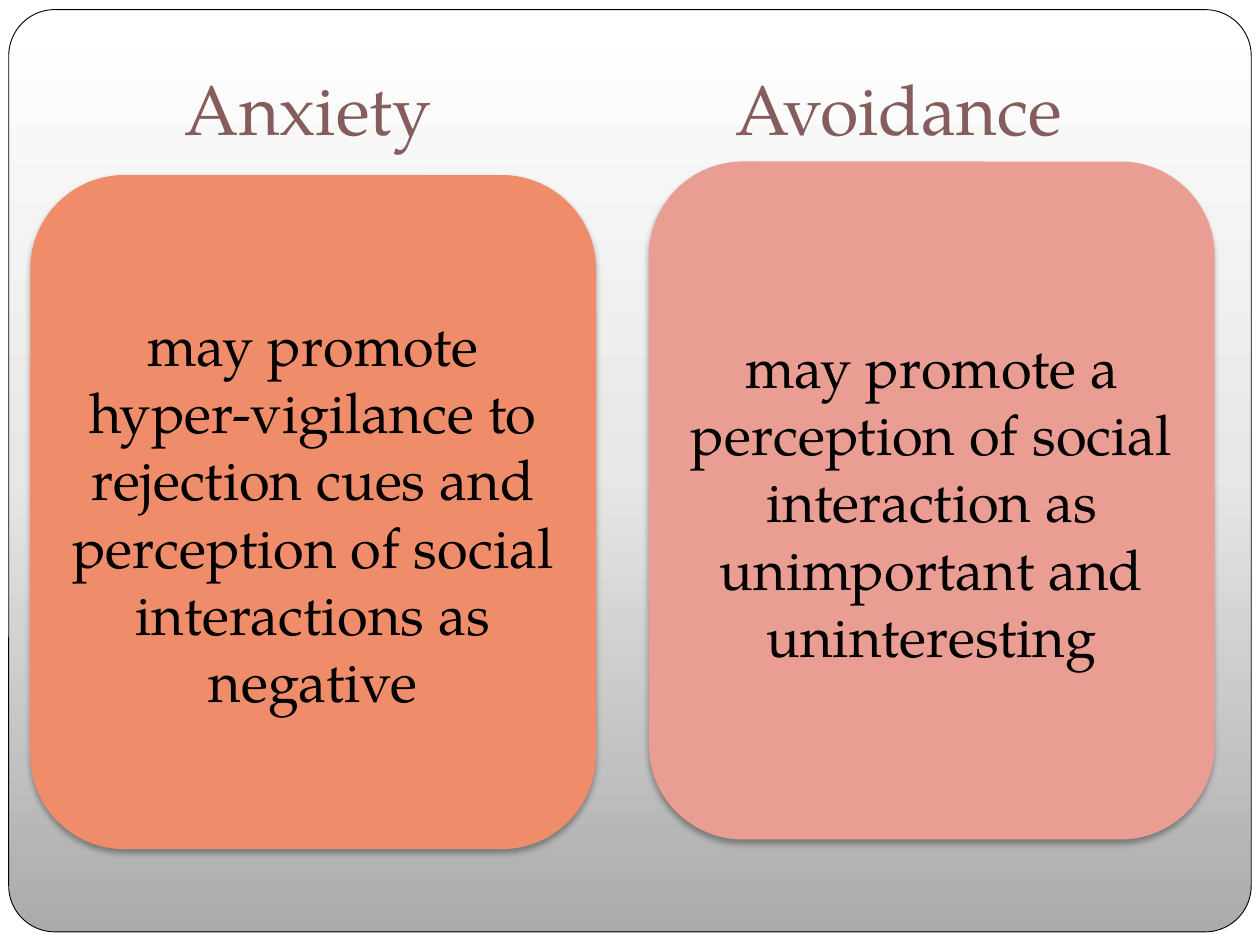
import copy

import pptx
import pptx.util
import pptx.dml.color
import pptx.enum.shapes
import pptx.enum.text
import pptx.oxml
import pptx.oxml.ns

Pt = pptx.util.Pt
FONT = "TeX Gyre Pagella"
STOPS = [(0, "ABABAB"), (0.5, "E7E7E7"), (1, "FFFFFF")]


def paint(code):
    return pptx.dml.color.RGBColor.from_string(code)


def place(shape, left, top, width, height):
    shape.left, shape.top = Pt(left), Pt(top)
    shape.width, shape.height = Pt(width), Pt(height)


def write(shape, text, size=32, color="000000"):
    frame = shape.text_frame
    frame.word_wrap = True
    frame.auto_size = pptx.enum.text.MSO_AUTO_SIZE.NONE
    frame.vertical_anchor = pptx.enum.text.MSO_ANCHOR.MIDDLE
    para = frame.paragraphs[0]
    para.alignment = pptx.enum.text.PP_ALIGN.CENTER
    para.space_before = Pt(0)
    run = para.add_run()
    run.text = text
    font = run.font
    font.name, font.size, font.bold = FONT, Pt(size), False
    font.color.rgb = paint(color)


def block(slide, box):
    kind = pptx.enum.shapes.MSO_SHAPE.ROUNDED_RECTANGLE
    shape = slide.shapes.add_shape(kind, *map(Pt, box))
    shape.shadow.inherit = False
    return shape


def panel(slide, box):
    shape = block(slide, box)
    shape.adjustments[0] = 0.05
    fill = shape.fill
    fill.gradient()
    fill.gradient_angle = 90
    first = shape._element.spPr.find(".//" + pptx.oxml.ns.qn("a:gs"))
    first.addnext(copy.deepcopy(first))
    for stop, (pos, code) in zip(fill.gradient_stops, STOPS):
        stop.position = pos
        stop.color.rgb = paint(code)
    shape.line.color.rgb = paint("000000")
    shape.line.width = Pt(0.5)


def shade(shape):
    effect = shape._element.spPr.find(pptx.oxml.ns.qn("a:effectLst"))
    effect.append(pptx.oxml.parse_xml(
        f'<a:outerShdw {pptx.oxml.ns.nsdecls("a")} blurRad="{Pt(3.5)}" '
        f'dist="{Pt(2.2)}" dir="5400000" rotWithShape="0">'
        '<a:srgbClr val="000000"><a:alpha val="32000"/></a:srgbClr>'
        '</a:outerShdw>'))


def card(slide, box, color, text):
    shape = block(slide, box)
    shape.fill.solid()
    shape.fill.fore_color.rgb = paint(color)
    shape.line.fill.background()
    shade(shape)
    write(shape, text)


def head(shape, box, text):
    place(shape, *box)
    write(shape, text, size=40, color="855D5D")


def main():
    deck = pptx.Presentation()
    deck.slide_width, deck.slide_height = Pt(720), Pt(540)
    slide = deck.slides.add_slide(deck.slide_layouts[4])
    slide.background.fill.solid()
    slide.background.fill.fore_color.rgb = paint("FFFFFF")

    title, body, *spare = slide.placeholders
    for item in spare:
        item._element.getparent().remove(item._element)

    panel(slide, (5, 5.5, 710, 527))
    card(slide, (370.8, 92.3, 323.3, 387.4), "E99D93",
         "may promote a perception of social interaction as "
         "unimportant and uninteresting")
    card(slide, (17.3, 100, 323.3, 385.2), "EF8C6A",
         "may promote hyper-vigilance to rejection cues and "
         "perception of social interactions as negative")
    head(title, (31, 36, 300, 51), "Anxiety ")
    head(body, (354, 36, 329, 51), "Avoidance ")
    for item in (title, body):
        slide.shapes._spTree.append(item._element)
    deck.save("out.pptx")


if __name__ == "__main__":
    main()
